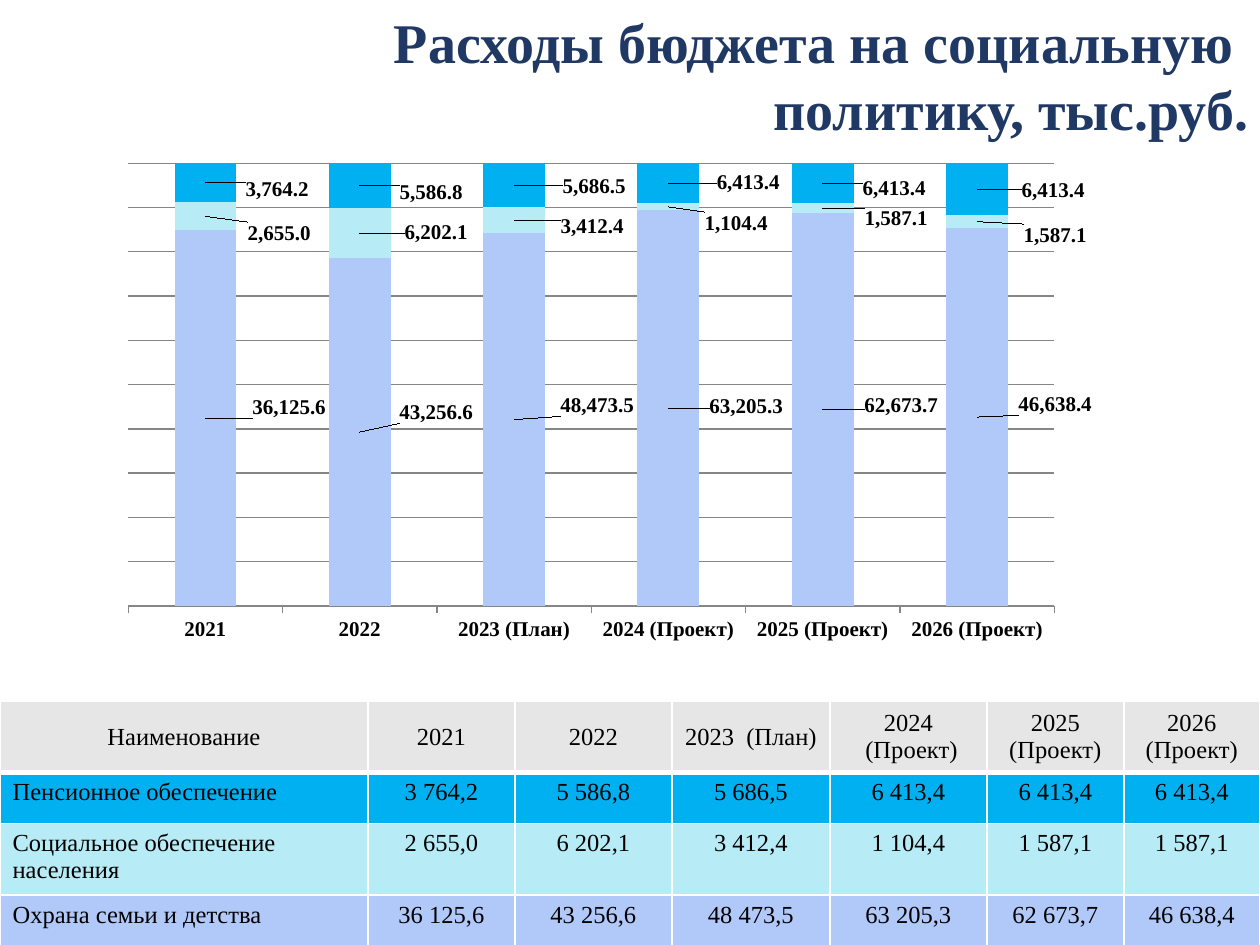
"""Build a slide on social policy spending with a stacked chart and a table."""
from lxml import etree
from pptx import Presentation
from pptx import util as u
from pptx.chart.data import CategoryChartData
from pptx.dml.color import RGBColor
from pptx.enum import chart as charts, text
from pptx.oxml.ns import qn

PX = 914400 / 126
THEME = {
    "font": "Times New Roman", "title": "203864", "ink": "000000", "white": "FFFFFF",
    "header": "E7E6E6", "line": "868686",
    "title_size": 32, "table_size": 14, "chart_size": 12,
}


def style(font, size, color, bold):
    values = {"name": THEME["font"], "size": u.Pt(THEME[size]), "bold": bold}
    for name, value in values.items():
        setattr(font, name, value)
    font.color.rgb = RGBColor.from_string(THEME[color])


def add_layout(parent, index, values):
    layout = etree.Element(qn("c:layout"))
    manual = etree.SubElement(layout, qn("c:manualLayout"))
    for name, value in values.items():
        etree.SubElement(manual, qn(f"c:{name}")).set("val", str(value))
    parent.insert(index, layout)


presentation = Presentation()
presentation.slide_width, presentation.slide_height = u.Inches(10), u.Inches(7.5)
slide = presentation.slides.add_slide(presentation.slide_layouts[6])

title = slide.shapes.add_textbox(*(round(n * PX) for n in (-34, 0, 1295, 149))).text_frame
title.word_wrap = True
title.vertical_anchor = text.MSO_ANCHOR.MIDDLE
title.text = "Расходы бюджета на социальную \nполитику, тыс.руб."
for paragraph in title.paragraphs:
    paragraph.alignment = text.PP_ALIGN.RIGHT
    style(paragraph.font, "title_size", "title", True)

# name, colour, values from the top of the column to its base
spending = [
    ("Пенсионное обеспечение", "00B0F0", [3764.2, 5586.8, 5686.5, 6413.4, 6413.4, 6413.4]),
    ("Социальное обеспечение населения", "B7EBF5", [2655.0, 6202.1, 3412.4, 1104.4, 1587.1, 1587.1]),
    ("Охрана семьи и детства", "B1C9F9", [36125.6, 43256.6, 48473.5, 63205.3, 62673.7, 46638.4]),
]
label_centers = [
    [(290, 407), (437, 412), (598, 405), (747, 406), (902, 405), (1056, 404)],
    [(280, 233), (437, 232), (593, 226), (737, 223), (897, 218), (1056, 235)],
    [(278, 189), (432, 192), (595, 186), (749, 182), (895, 188), (1054, 190)],
]
stack = spending[::-1]

table_frame = slide.shapes.add_table(4, 7, *(round(n * PX) for n in (0, 701, 1260, 244)))
table = table_frame.table
table.first_row = table.horz_banding = False
for column, width in zip(table.columns, (368, 147, 157, 158, 157, 137, 136)):
    column.width = round(width * PX)
for row, height in zip(table.rows, (71, 51, 71, 51)):
    row.height = round(height * PX)

header = ["Наименование", "2021", "2022", "2023  (План)", "2024\n (Проект)", "2025 (Проект)", "2026\n(Проект)"]
rows = [(THEME["header"], header)]
for name, color, values in spending:
    rows.append((color, [name] + [f"{value:,.1f}".replace(",", " ").replace(".", ",") for value in values]))
for r, (color, words) in enumerate(rows):
    for c, word in enumerate(words):
        cell = table.cell(r, c)
        cell.text = word
        cell.vertical_anchor = text.MSO_ANCHOR.TOP if r else text.MSO_ANCHOR.MIDDLE
        for paragraph in cell.text_frame.paragraphs:
            paragraph.alignment = text.PP_ALIGN.LEFT if r and not c else text.PP_ALIGN.CENTER
            style(paragraph.font, "table_size", "ink", False)
        properties = cell._tc.get_or_add_tcPr()
        for side in ("lnL", "lnR", "lnT", "lnB"):
            width = 3 if r == 0 and side == "lnB" else 1
            border = etree.SubElement(properties, qn(f"a:{side}"), w=str(u.Pt(width)))
            fill = etree.SubElement(border, qn("a:solidFill"))
            etree.SubElement(fill, qn("a:srgbClr"), val=THEME["white"])
        cell.fill.solid()
        cell.fill.fore_color.rgb = RGBColor.from_string(color)

data = CategoryChartData(number_format="#,##0.0")
data.categories = ["2021", "2022", "2023 (План)", "2024 (Проект)", "2025 (Проект)", "2026 (Проект)"]
for name, color, values in stack:
    data.add_series(name, values)
chart = slide.shapes.add_chart(
    charts.XL_CHART_TYPE.COLUMN_STACKED_100, *(round(n * PX) for n in (1, 160, 1260, 559)), data
).chart
chart.has_legend = chart.has_title = False
style(chart.font, "chart_size", "ink", True)
plot = chart.plots[0]
plot.gap_width, plot.overlap, plot.vary_by_categories = 150, 100, False

value_axis, category_axis = chart.value_axis, chart.category_axis
value_axis.visible = False
value_axis.has_major_gridlines = True
category_axis.major_tick_mark = charts.XL_TICK_MARK.OUTSIDE
style(category_axis.tick_labels.font, "chart_size", "ink", True)
for line in (value_axis.major_gridlines.format.line, category_axis.format.line):
    line.color.rgb = RGBColor.from_string(THEME["line"])
    line.width = u.Pt(0.75)

plot_area = chart._chartSpace.chart.plotArea
for layout in plot_area.findall(qn("c:layout")):
    plot_area.remove(layout)
add_layout(plot_area, 0, {
    "layoutTarget": "inner", "xMode": "edge", "yMode": "edge",
    "x": 0.101, "y": 0.006, "w": 0.735, "h": 0.792,
})

totals = [sum(values) for values in zip(*(values for name, color, values in stack))]
bases = [0] * len(totals)
for series, (name, color, values), centers in zip(plot.series, stack, label_centers):
    series.format.fill.solid()
    series.format.fill.fore_color.rgb = RGBColor.from_string(color)
    labels = series.data_labels
    labels.show_value = True
    labels.number_format, labels.number_format_is_linked = "#,##0.0", False
    style(labels.font, "chart_size", "ink", True)
    for i, (x, y) in enumerate(centers):
        style(series.points[i].data_label.font, "chart_size", "ink", True)
        bar_x = 129 + 926 * (i + 0.5) / len(totals)
        bar_y = 606 - 443 * (bases[i] + values[i] / 2) / totals[i]
        label = series._element.findall(f".//{qn('c:dLbl')}")[i]
        add_layout(label, 1, {"x": round((x - bar_x) / 1260, 4), "y": round((y - bar_y) / 559, 4)})
        bases[i] += values[i]

presentation.save("out.pptx")
